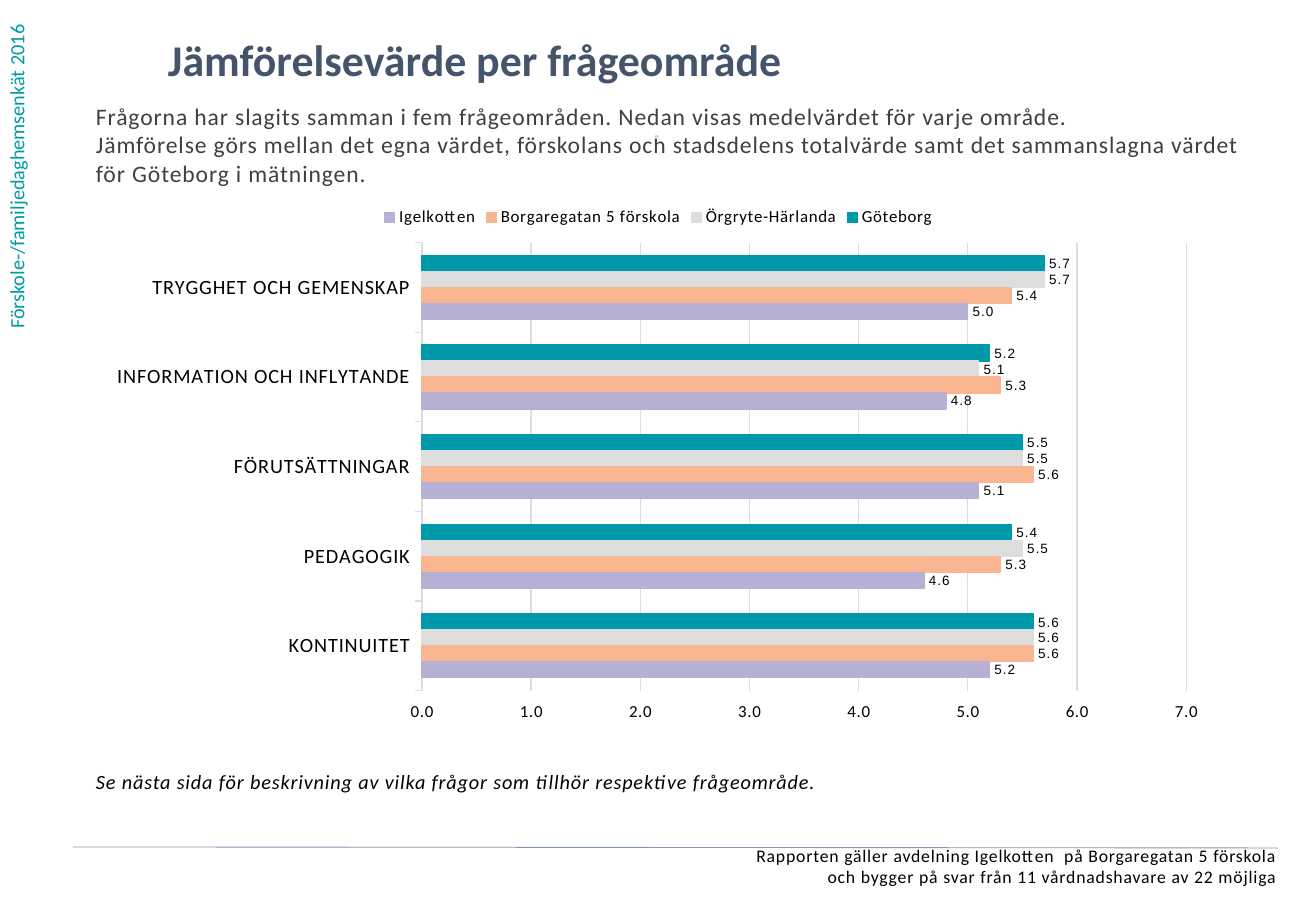
"""Build the slide that compares preschool survey scores per question area."""
from lxml.etree import SubElement
from pptx import Presentation
from pptx.chart.data import CategoryChartData
from pptx.dml.color import RGBColor as Rgb
from pptx.enum.chart import XL_CHART_TYPE as Kind, XL_TICK_LABEL_POSITION as Tags
from pptx.enum.chart import XL_LABEL_POSITION as Spot, XL_LEGEND_POSITION as Side
from pptx.enum.chart import XL_TICK_MARK as Tick
from pptx.enum.shapes import MSO_CONNECTOR as Link
from pptx.enum.text import MSO_ANCHOR as Anchor, MSO_AUTO_SIZE as Fit, PP_ALIGN as Align
from pptx.oxml.ns import qn
from pptx.util import Pt

PX = 914400 / 121.5
HUES = {
    "title": "44546A", "intro": "404040", "text": "000000", "side": "009BA4",
    "dot": "D2D9E2", "rule": "8497B0", "grid": "DDDDDD",
    "Göteborg": "0099AA", "Örgryte-Härlanda": "DDDDDD",
    "Borgaregatan 5 förskola": "F9B590", "Igelkotten": "B6B1D4",
}
AREAS = ["TRYGGHET OCH GEMENSKAP", "INFORMATION OCH INFLYTANDE",
         "FÖRUTSÄTTNINGAR", "PEDAGOGIK", "KONTINUITET"]
SCORES = {
    "Göteborg": [5.7, 5.2, 5.5, 5.4, 5.6],
    "Örgryte-Härlanda": [5.7, 5.1, 5.5, 5.5, 5.6],
    "Borgaregatan 5 förskola": [5.4, 5.3, 5.6, 5.3, 5.6],
    "Igelkotten": [5.0, 4.8, 5.1, 4.6, 5.2],
}
SCALE = "0.0;0.0"


def style(font, size, hue, face="Calibri", track=50):
    """Set face, size, colour and letter spacing of a font."""
    font.name, font.size = face, Pt(size)
    font.color.rgb = Rgb.from_string(HUES[hue])
    font._rPr.set("spc", str(track))


def write(shape, box, lines, size, hue, align=Align.LEFT, track=50):
    """Place a text shape and fill it with evenly styled paragraphs."""
    shape.left, shape.top, shape.width, shape.height = [round(n * PX) for n in box]
    frame = shape.text_frame
    frame.text = "\n".join(lines)
    frame.word_wrap, frame.auto_size = True, Fit.NONE
    frame.vertical_anchor = Anchor.TOP
    frame.margin_left = frame.margin_right = frame.margin_top = frame.margin_bottom = 0
    for par in frame.paragraphs:
        par.alignment = align
        style(par.font, size, hue, track=track)
    return frame


deck = Presentation()
deck.slide_width, deck.slide_height = round(1316 * PX), round(911 * PX)
slide = deck.slides.add_slide(deck.slide_layouts[5])
shapes = slide.shapes

title = write(shapes.title, (168, 33, 1013, 69), ["Jämförelsevärde per frågeområde"],
              26, "title", track=0)
title.paragraphs[0].font.bold = True

side = write(shapes.add_textbox(0, 0, 0, 0), (4, 0, 37, 329),
             ["Förskole-/familjedaghemsenkät 2016"], 12, "side", track=0)
side._txBody.bodyPr.set("vert", "vert270")
side.margin_top = round(4 * PX)

write(shapes.add_textbox(0, 0, 0, 0), (96, 102, 1149, 123), [
    "Frågorna har slagits samman i fem frågeområden. Nedan visas medelvärdet för varje område.",
    "Jämförelse görs mellan det egna värdet, förskolans och stadsdelens totalvärde samt "
    "det sammanslagna värdet för Göteborg i mätningen."], 14, "intro")

dot = write(shapes.add_textbox(0, 0, 0, 0), (470, 124, 374, 47), ["⋅"],
            12, "dot", Align.CENTER)
dot.paragraphs[0].font.bold = True

data = CategoryChartData(number_format="0.0")
data.categories = AREAS
for name, vals in SCORES.items():
    data.add_series(name, vals)
place = [round(n * PX) for n in (96, 194, 1124, 540)]
chart = shapes.add_chart(Kind.BAR_CLUSTERED, *place, data).chart
chart.has_title = False
style(chart.font, 10, "text")
chart.has_legend = True
chart.legend.position = Side.TOP
chart.legend.include_in_layout = False
style(chart.legend.font, 10, "text")

plot = chart.plots[0]
plot.gap_width, plot.overlap, plot.vary_by_categories = 162, 0, False
for bar in plot.series:
    hue = Rgb.from_string(HUES[bar.name])
    bar.format.fill.solid()
    bar.format.fill.fore_color.rgb = hue
    bar.format.line.color.rgb = hue
    bar.format.line.width = Pt(0.75)
    tags = bar.data_labels
    tags.show_value = True
    tags.number_format, tags.number_format_is_linked = SCALE, False
    tags.position = Spot.OUTSIDE_END
    style(tags.font, 8, "text", "Arial")

cats, vals = chart.category_axis, chart.value_axis
cats.reverse_order = True
vals.tick_label_position = Tags.HIGH
vals.minimum_scale, vals.maximum_scale, vals.major_unit = 0, 7, 1
vals.has_major_gridlines = True
for axis, size in ((cats, 12), (vals, 10)):
    axis.major_tick_mark = Tick.OUTSIDE
    style(axis.tick_labels.font, size, "text")
for part in (cats, vals.major_gridlines):
    part.format.line.color.rgb = Rgb.from_string(HUES["grid"])
    part.format.line.width = Pt(0.75)
vals.format.line.fill.background()
vals.tick_labels.number_format = SCALE
vals.tick_labels.number_format_is_linked = False

area = chart._chartSpace.chart.plotArea
for old in area.findall(qn("c:layout")):
    area.remove(old)
layout = SubElement(area, qn("c:layout"))
area.insert(0, layout)
manual = SubElement(layout, qn("c:manualLayout"))
for tag, val in (("layoutTarget", "inner"), ("xMode", "edge"), ("yMode", "edge"),
                 ("x", "0.29"), ("y", "0.09"), ("w", "0.68"), ("h", "0.83")):
    SubElement(manual, qn("c:" + tag)).set("val", val)

note = write(shapes.add_textbox(0, 0, 0, 0), (96, 769, 1124, 40),
             ["Se nästa sida för beskrivning av vilka frågor som tillhör respektive frågeområde."],
             12, "text")
note.paragraphs[0].font.italic = True

rule = shapes.add_connector(Link.STRAIGHT, *[round(n * PX) for n in (73, 847, 1278, 848)])
rule.line.color.rgb = Rgb.from_string(HUES["rule"])
rule.line.width = Pt(0.5)
SubElement(rule._element.spPr, qn("a:effectLst"))

write(shapes.add_textbox(0, 0, 0, 0), (14, 845, 1263, 52), [
    "Rapporten gäller avdelning Igelkotten  på Borgaregatan 5 förskola",
    "och bygger på svar från 11 vårdnadshavare av 22 möjliga"], 10.5, "text", Align.RIGHT)

deck.save("out.pptx")
